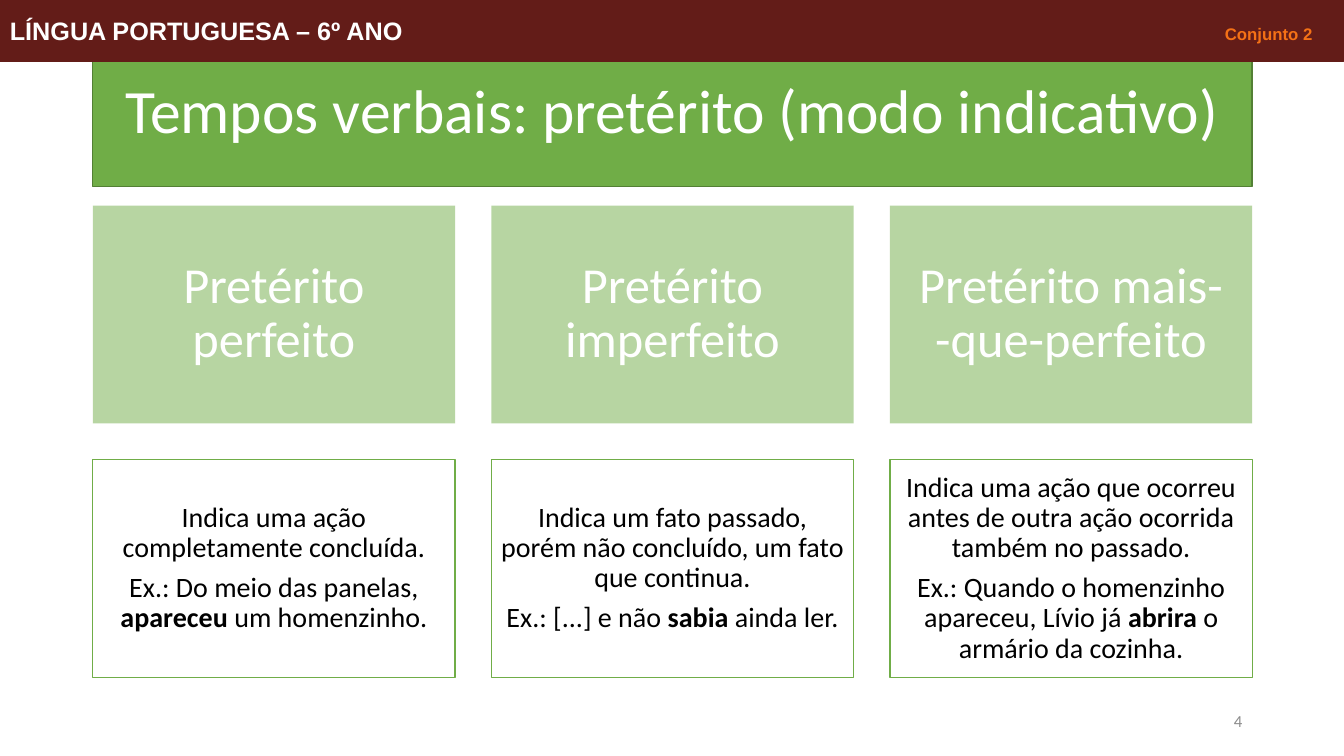
import dataclasses

import lxml.etree
import pptx
import pptx.dml.color
import pptx.enum.shapes
import pptx.enum.text
import pptx.oxml.ns
import pptx.util

Inches = pptx.util.Inches
Align = pptx.enum.text.PP_ALIGN


@dataclasses.dataclass(frozen=True)
class Theme:
    body_font: str = "Calibri"
    header_font: str = "Arial"
    green: str = "70AD47"
    dark_green: str = "538035"
    maroon: str = "631C18"
    orange: str = "F47116"
    white: str = "FFFFFF"
    black: str = "000000"
    gray: str = "8C8C8C"
    title_size: int = 44
    tense_size: int = 36
    body_size: int = 20
    header_size: int = 18
    small_size: int = 12


THEME = Theme()
WIDTH, HEIGHT = 13.33, 7.5
MARGIN, CONTENT_WIDTH = 0.92, 11.5
GAP = 0.36

TENSES = [
    ("Pretérito perfeito",
     "Indica uma ação completamente concluída.",
     ("Ex.: Do meio das panelas, ", "apareceu", " um homenzinho.")),
    ("Pretérito imperfeito",
     "Indica um fato passado, porém não concluído, um fato que continua.",
     ("Ex.: [...] e não ", "sabia", " ainda ler.")),
    ("Pretérito mais-\n-que-perfeito",
     "Indica uma ação que ocorreu antes de outra ação ocorrida também no passado.",
     ("Ex.: Quando o homenzinho apareceu, Lívio já ", "abrira", " o armário da cozinha.")),
]


def rgb(color):
    return pptx.dml.color.RGBColor.from_string(color)


def add_box(slide, box, fill=None, line=None, line_width=1, opacity=None, inset=0.1):
    shape = slide.shapes.add_shape(
        pptx.enum.shapes.MSO_SHAPE.RECTANGLE, *(Inches(length) for length in box))
    shape.shadow.inherit = False
    if fill:
        shape.fill.solid()
        shape.fill.fore_color.rgb = rgb(fill)
    else:
        shape.fill.background()
    if opacity:
        color = shape.fill._xPr.find(".//" + pptx.oxml.ns.qn("a:srgbClr"))
        alpha = lxml.etree.SubElement(color, pptx.oxml.ns.qn("a:alpha"))
        alpha.set("val", str(opacity * 1000))
    if line:
        shape.line.color.rgb = rgb(line)
        shape.line.width = pptx.util.Pt(line_width)
    else:
        shape.line.fill.background()
    frame = shape.text_frame
    frame.word_wrap = True
    frame.vertical_anchor = pptx.enum.text.MSO_ANCHOR.MIDDLE
    frame.margin_left = frame.margin_right = Inches(inset)
    frame.margin_top = frame.margin_bottom = Inches(min(inset, 0.05) if inset == 0.1 else inset)
    return shape


def add_text(paragraph, text, size, color, font=THEME.body_font, bold=False):
    for index, line in enumerate(text.split("\n")):
        if index:
            paragraph.add_line_break()
        run = paragraph.add_run()
        run.text = line
        run.font.name = font
        run.font.size = pptx.util.Pt(size)
        run.font.bold = bold
        run.font.color.rgb = rgb(color)


def format_paragraph(paragraph, align=Align.CENTER, space_after=0):
    paragraph.alignment = align
    paragraph.line_spacing = 0.9
    paragraph.space_after = pptx.util.Pt(space_after)


def add_title(slide, box):
    shape = add_box(slide, box, fill=THEME.green, line=THEME.dark_green)
    paragraph = shape.text_frame.paragraphs[0]
    format_paragraph(paragraph)
    add_text(paragraph, "Tempos verbais: pretérito (modo indicativo)",
             THEME.title_size, THEME.white)


def add_tense_name(slide, box, name):
    shape = add_box(slide, box, fill=THEME.green, opacity=50, inset=0.15)
    paragraph = shape.text_frame.paragraphs[0]
    format_paragraph(paragraph, space_after=0.35 * THEME.tense_size)
    add_text(paragraph, name, THEME.tense_size, THEME.white)


def add_tense_details(slide, box, meaning, example):
    shape = add_box(slide, box, fill=THEME.white, line=THEME.green, inset=0.08)
    frame = shape.text_frame
    for paragraph, parts in ((frame.paragraphs[0], (meaning,)),
                             (frame.add_paragraph(), example)):
        format_paragraph(paragraph, space_after=0.35 * THEME.body_size)
        for index, part in enumerate(parts):
            add_text(paragraph, part, THEME.body_size, THEME.black, bold=index == 1)


def add_tense_grid(slide, box):
    left, top, width, height = box
    cell_width = (width - GAP * (len(TENSES) - 1)) / len(TENSES)
    cell_height = (height - GAP) / 2
    for column, (name, meaning, example) in enumerate(TENSES):
        x = left + column * (cell_width + GAP)
        add_tense_name(slide, (x, top, cell_width, cell_height), name)
        add_tense_details(slide, (x, top + cell_height + GAP, cell_width, cell_height),
                          meaning, example)


def add_page_number(slide, box):
    paragraph = add_box(slide, box).text_frame.paragraphs[0]
    paragraph.alignment = Align.RIGHT
    add_text(paragraph, "4", THEME.small_size, THEME.gray)


def add_header(slide, box):
    shape = add_box(slide, box, fill=THEME.maroon, line=THEME.maroon, line_width=0.75)
    paragraph = shape.text_frame.paragraphs[0]
    paragraph.alignment = Align.LEFT
    properties = paragraph._p.get_or_add_pPr()
    tabs = lxml.etree.SubElement(properties, pptx.oxml.ns.qn("a:tabLst"))
    tab = lxml.etree.SubElement(tabs, pptx.oxml.ns.qn("a:tab"))
    tab.set("pos", str(Inches(box[2] - 0.41)))
    tab.set("algn", "r")
    add_text(paragraph, "LÍNGUA PORTUGUESA – 6º ANO\t", THEME.header_size, THEME.white,
             font=THEME.header_font, bold=True)
    add_text(paragraph, "Conjunto 2", THEME.small_size, THEME.orange,
             font=THEME.header_font, bold=True)


def main():
    presentation = pptx.Presentation()
    presentation.slide_width = Inches(WIDTH)
    presentation.slide_height = Inches(HEIGHT)
    slide = presentation.slides.add_slide(presentation.slide_layouts[6])
    add_title(slide, (MARGIN, 0.4, CONTENT_WIDTH, 1.45))
    add_tense_grid(slide, (MARGIN, 2.04, CONTENT_WIDTH, 4.68))
    add_page_number(slide, (MARGIN + CONTENT_WIDTH - 3, 6.95, 3, 0.4))
    add_header(slide, (0, 0, WIDTH, 0.61))
    presentation.save("out.pptx")


if __name__ == "__main__":
    main()
